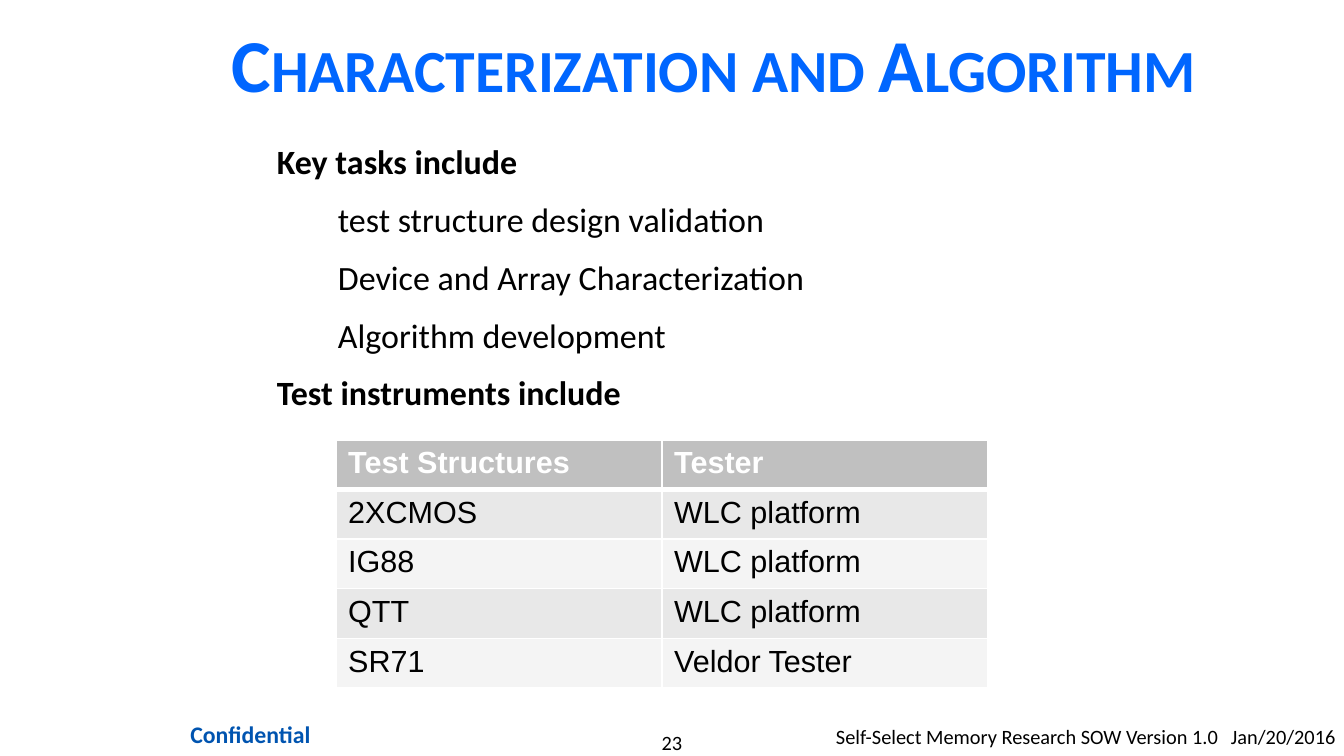
from lxml import etree
from pptx import Presentation
from pptx.dml.color import RGBColor
from pptx.enum.text import MSO_ANCHOR, PP_ALIGN
from pptx.oxml.ns import qn
from pptx.util import Pt

PX = 7483  # EMU per px
LEFT, CENTER = PP_ALIGN.LEFT, PP_ALIGN.CENTER
MIDDLE = MSO_ANCHOR.MIDDLE
COLORS = {
    "black": "000000", "white": "FFFFFF", "title": "0066FF",
    "confidential": "0054B0", "header": "C0C0C0",
    "odd": "E8E8E8", "even": "F4F4F4",
}


def style(paragraph, size, color="black", bold=False, font="Calibri"):
    for run in paragraph.runs:
        run.font.size = Pt(size)
        run.font.name = font
        run.font.bold = bold
        run.font.color.rgb = RGBColor.from_string(COLORS[color])


def add_text(box, lines, margins=(12, 6), align=LEFT, **look):
    frame = slide.shapes.add_textbox(*(n * PX for n in box)).text_frame
    frame.word_wrap = True
    frame.margin_left = frame.margin_right = margins[0] * PX
    frame.margin_top = frame.margin_bottom = margins[1] * PX
    frame.text = lines
    for paragraph in frame.paragraphs:
        paragraph.alignment = align
        style(paragraph, **look)
    return frame


prs = Presentation()
prs.slide_width, prs.slide_height = 1344 * PX, 756 * PX
slide = prs.slides.add_slide(prs.slide_layouts[6])

# Footer: page number, document version with date, confidentiality mark
add_text((554, 730, 236, 24), "23", margins=(0, 0), align=CENTER, size=12)
version = add_text((836, 718, 508, 37),
                   "Self-Select Memory Research SOW Version 1.0\tJan/20/2016",
                   margins=(0, 6), size=12)
tabs = etree.SubElement(version.paragraphs[0]._p.get_or_add_pPr(), qn("a:tabLst"))
etree.SubElement(tabs, qn("a:tab"), pos=str(395 * PX), algn="l")
add_text((155, 714, 191, 42), "Confidential", align=CENTER,
         size=14, color="confidential", bold=True)

# Title in small capitals
title = add_text((183, 16, 1061, 93), "Characterization and Algorithm",
                 align=CENTER, size=44, color="title", bold=True)
title.vertical_anchor = MIDDLE
title.paragraphs[0].runs[0].font._element.set("cap", "small")

# Outline: bold headings with indented tasks
outline = [
    ("Key tasks include", 0),
    ("test structure design validation", 1),
    ("Device and Array Characterization", 1),
    ("Algorithm development", 1),
    ("Test instruments include", 0),
]
body = add_text((265, 135, 979, 304), "\n".join(line for line, _ in outline), size=20)
for i, (paragraph, (_, level)) in enumerate(zip(body.paragraphs, outline)):
    paragraph.level = level
    paragraph.space_before = Pt(10 if i else 0)
    paragraph.runs[0].font.bold = level == 0
    if level:
        paragraph._p.get_or_add_pPr().set("marL", str(61 * PX))

# Table of test instruments
instruments = [
    ("Test Structures", "Tester"),
    ("2XCMOS", "WLC platform"),
    ("IG88", "WLC platform"),
    ("QTT", "WLC platform"),
    ("SR71", "Veldor Tester"),
]
table = slide.shapes.add_table(len(instruments), 2, 336 * PX, 440 * PX,
                               652 * PX, 248 * PX).table
for r, row in enumerate(instruments):
    fill = "header" if r == 0 else ("even", "odd")[r % 2]
    for c, text in enumerate(row):
        cell = table.cell(r, c)
        cell.text = text
        style(cell.text_frame.paragraphs[0], 18, "black" if r else "white",
              bold=r == 0, font="Arial")
        # White borders, thicker under the header
        widths = {"lnL": 1, "lnR": 1, "lnT": 3 if r == 1 else 1, "lnB": 1 if r else 3}
        for side, width in widths.items():
            line = etree.SubElement(cell._tc.get_or_add_tcPr(), qn(f"a:{side}"),
                                    w=str(Pt(width)))
            solid = etree.SubElement(line, qn("a:solidFill"))
            etree.SubElement(solid, qn("a:srgbClr"), val=COLORS["white"])
        cell.fill.solid()
        cell.fill.fore_color.rgb = RGBColor.from_string(COLORS[fill])

prs.save("out.pptx")
